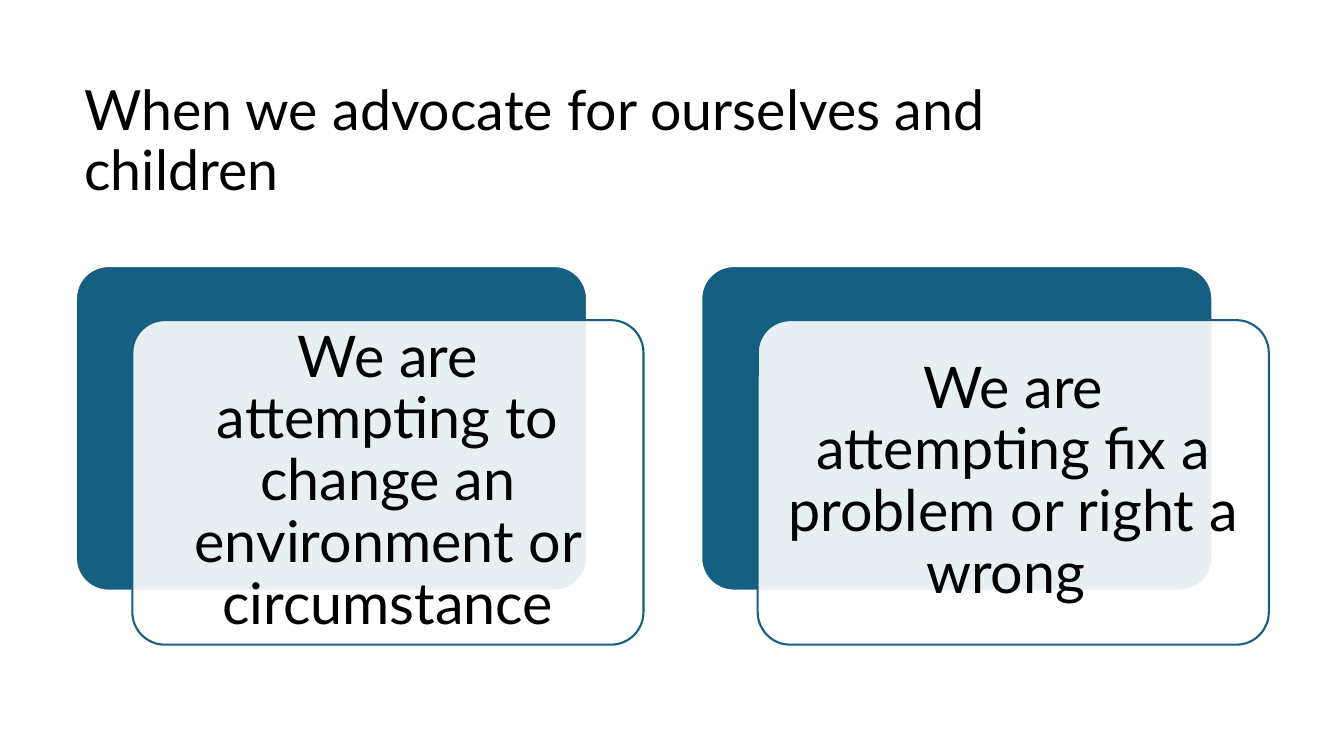
import dataclasses

import lxml.etree
import pptx
import pptx.dml.color
import pptx.enum.shapes
import pptx.enum.text
import pptx.oxml.ns
import pptx.util


@dataclasses.dataclass(frozen=True)
class Theme:
    font: str = "Lato"
    ink: str = "000000"
    paper: str = "FFFFFF"
    accent: str = "156082"
    title_size: float = 39.6
    card_size: float = 41
    line_width: float = 1.5
    line_spacing: float = 0.9
    corner: float = 0.1
    inset: float = 0.17


class SlideBuilder:
    def __init__(self, deck, theme):
        self.deck = deck
        self.theme = theme
        self.page = deck.slides.add_slide(deck.slide_layouts[6])

    def place(self, left, top, width, height):
        across, down = self.deck.slide_width, self.deck.slide_height
        shares = ((left, across), (top, down), (width, across), (height, down))
        return [round(percent * length / 100) for percent, length in shares]

    def color(self, value):
        return pptx.dml.color.RGBColor.from_string(value)

    def set_text(self, shape, text, size, alignment):
        frame = shape.text_frame
        frame.text = text
        frame.word_wrap = True
        frame.vertical_anchor = pptx.enum.text.MSO_ANCHOR.MIDDLE
        para = frame.paragraphs[0]
        para.alignment = alignment
        para.line_spacing = self.theme.line_spacing
        span = para.runs[0]
        span.font.name = self.theme.font
        span.font.size = pptx.util.Pt(size)
        span.font.color.rgb = self.color(self.theme.ink)

    def title(self, text, area):
        box = self.page.shapes.add_textbox(*self.place(*area))
        self.set_text(box, text, self.theme.title_size, pptx.enum.text.PP_ALIGN.LEFT)

    def panel(self, area, fill, line, opacity=100):
        shape = self.page.shapes.add_shape(
            pptx.enum.shapes.MSO_SHAPE.ROUNDED_RECTANGLE, *self.place(*area)
        )
        shape.shadow.inherit = False
        shape.adjustments[0] = self.theme.corner
        shape.fill.solid()
        shape.fill.fore_color.rgb = self.color(fill)
        shape.line.color.rgb = self.color(line)
        shape.line.width = pptx.util.Pt(self.theme.line_width)
        if opacity < 100:
            solid = shape.element.spPr.find(pptx.oxml.ns.qn("a:solidFill"))
            alpha = lxml.etree.SubElement(solid[0], pptx.oxml.ns.qn("a:alpha"))
            alpha.set("val", str(opacity * 1000))
        return shape

    def card(self, text, left, top, width, height, shift_x, shift_y):
        theme = self.theme
        self.panel((left, top, width, height), theme.accent, theme.paper)
        front = self.panel(
            (left + shift_x, top + shift_y, width, height),
            theme.paper, theme.accent, opacity=90,
        )
        self.set_text(front, text, theme.card_size, pptx.enum.text.PP_ALIGN.CENTER)
        frame = front.text_frame
        frame.margin_left = frame.margin_right = pptx.util.Inches(theme.inset)
        frame.margin_top = frame.margin_bottom = pptx.util.Inches(theme.inset)


CARDS = (
    "We are attempting to change an environment or circumstance",
    "We are attempting fix a problem or right a wrong ",
)
CARD_LEFT, CARD_TOP, CARD_PITCH = 5.65, 35.2, 46.53
CARD_WIDTH, CARD_HEIGHT = 38.03, 42.93
SHIFT_X, SHIFT_Y = 4.2, 7.15


def main():
    deck = pptx.Presentation()
    deck.slide_width = pptx.util.Inches(13.33)
    deck.slide_height = pptx.util.Inches(7.5)
    builder = SlideBuilder(deck, Theme())
    builder.title(
        "When we advocate for ourselves and children", (5.55, 10.93, 78.83, 15.73)
    )
    for column, text in enumerate(CARDS):
        builder.card(
            text, CARD_LEFT + column * CARD_PITCH, CARD_TOP,
            CARD_WIDTH, CARD_HEIGHT, SHIFT_X, SHIFT_Y,
        )
    deck.save("out.pptx")


if __name__ == "__main__":
    main()
